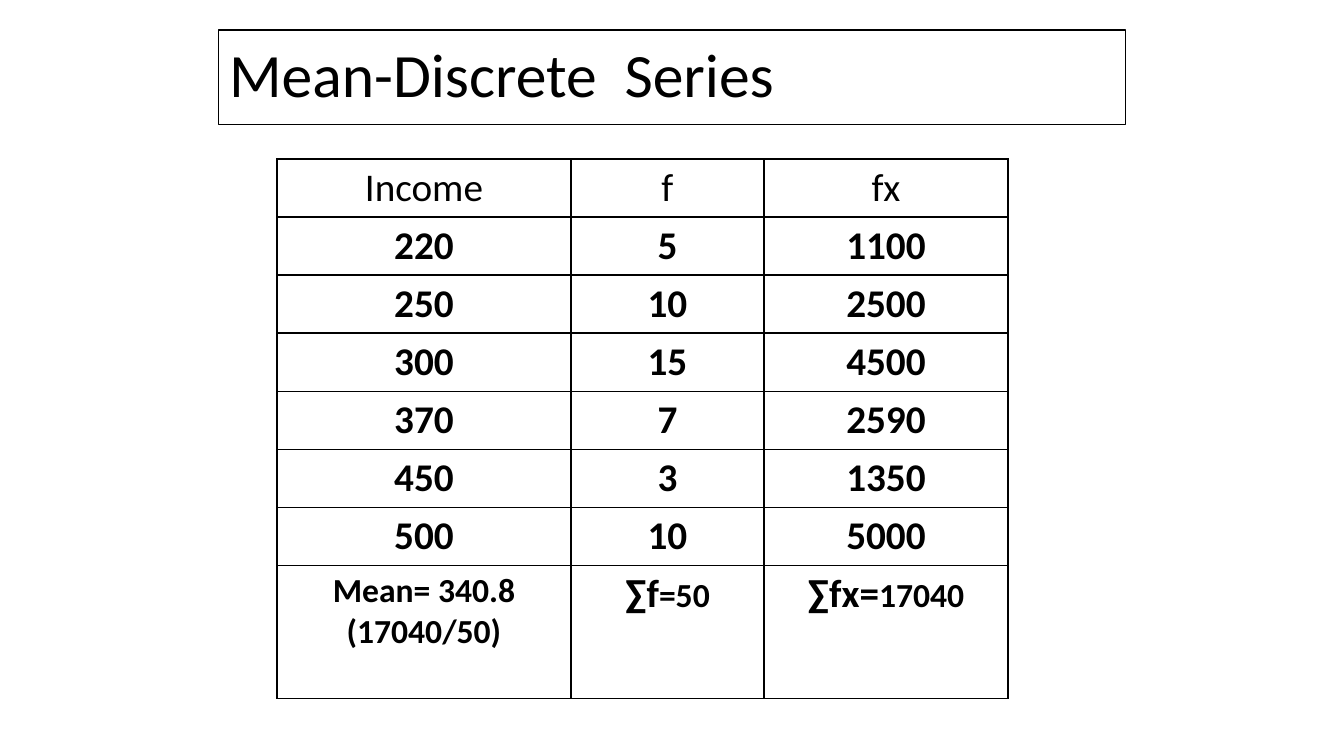
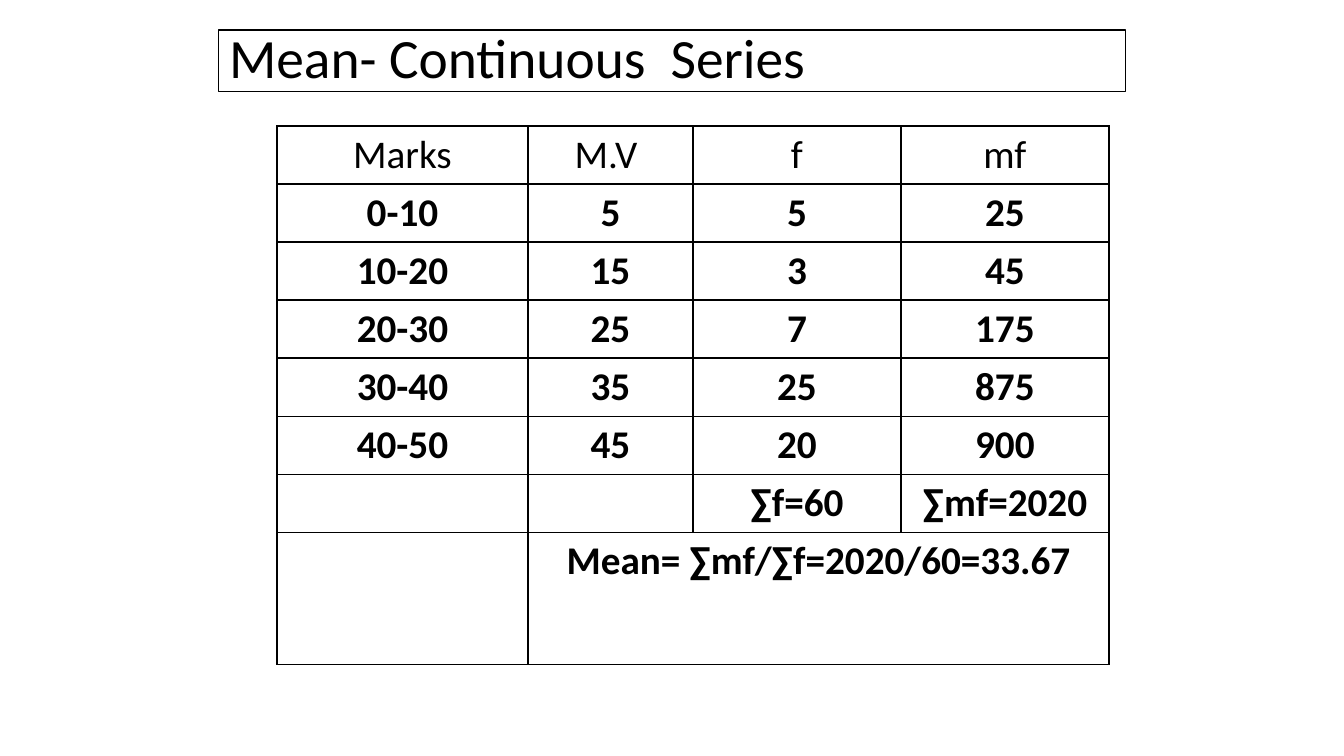
from lxml.etree import SubElement
from pptx import Presentation
from pptx.dml.color import RGBColor
from pptx.enum.text import MSO_ANCHOR, MSO_AUTO_SIZE, PP_ALIGN
from pptx.oxml.ns import qn
from pptx.util import Pt

SLIDE_WIDTH, SLIDE_HEIGHT = 1344, 756
PX = 12192000 / SLIDE_WIDTH
FONT = "Calibri"
BLACK, WHITE = "000000", "FFFFFF"
TITLE_LEFT, TITLE_TOP, TITLE_WIDTH = 219, 30, 907
TABLE_LEFT, ROW_HEIGHT = 277, 58
CELL_SIZE, SMALL_SIZE = 28, 24

# A cell is a plain string, or a list of paragraphs made of (text, size) runs.
SLIDES = [
    {
        "title": "Mean-Discrete  Series",
        "title_size": 44,
        "title_height": 95,
        "table_top": 159,
        "columns": [294, 193, 244],
        "last_row": 133,
        "rows": [
            ["Income", " f ", "fx"],
            ["220", "5", "1100"],
            ["250", "10", "2500"],
            ["300", "15", "4500"],
            ["370", "7", "2590"],
            ["450", "3", "1350"],
            ["500", "10", "5000"],
            [
                [[("Mean= 340.8", SMALL_SIZE)], [("(17040/50)", SMALL_SIZE)]],
                [[("∑f", CELL_SIZE), ("=50", SMALL_SIZE)]],
                [[("∑fx=", CELL_SIZE), ("17040", SMALL_SIZE)]],
            ],
        ],
    },
    {
        "title": "Mean- Continuous  Series",
        "title_size": 39.6,
        "title_height": 62,
        "table_top": 126,
        "columns": [251, 165, 208, 208],
        "last_row": 132,
        "merge": ((7, 1), (7, 3)),
        "rows": [
            ["Marks", "M.V ", " f ", "mf"],
            ["0-10", "5", "5", "25"],
            ["10-20", "15", "3", "45"],
            ["20-30", "25", "7", "175"],
            ["30-40", "35", "25", "875"],
            ["40-50", "45", "20", "900"],
            ["", "", "∑f=60", "∑mf=2020"],
            ["", "Mean= ∑mf/∑f=2020/60=33.67", "", ""],
        ],
    },
]


def px(length):
    return round(length * PX)


def color(value):
    return RGBColor.from_string(value)


def add_span(para, text, size, bold=False):
    span = para.add_run()
    span.text = text
    span.font.name = FONT
    span.font.size = Pt(size)
    span.font.bold = bold
    span.font.color.rgb = color(BLACK)


def format_title(box, content):
    box.left, box.top = px(TITLE_LEFT), px(TITLE_TOP)
    box.width, box.height = px(TITLE_WIDTH), px(content["title_height"])
    box.line.color.rgb = color(BLACK)
    box.line.width = Pt(0.75)
    frame = box.text_frame
    frame.word_wrap = True
    frame.auto_size = MSO_AUTO_SIZE.NONE
    frame.vertical_anchor = MSO_ANCHOR.MIDDLE
    para = frame.paragraphs[0]
    para.alignment = PP_ALIGN.LEFT
    para.line_spacing = 0.9
    add_span(para, content["title"], content["title_size"])


def add_borders(cell):
    properties = cell._tc.get_or_add_tcPr()
    for side in ("a:lnL", "a:lnR", "a:lnT", "a:lnB"):
        line = SubElement(properties, qn(side), w=str(Pt(1)))
        fill = SubElement(line, qn("a:solidFill"))
        SubElement(fill, qn("a:srgbClr"), val=BLACK)


def fill_cell(cell, value, bold):
    add_borders(cell)
    cell.fill.solid()
    cell.fill.fore_color.rgb = color(WHITE)
    if not value:
        return
    paragraphs = [[(value, CELL_SIZE)]] if isinstance(value, str) else value
    frame = cell.text_frame
    for index, spans in enumerate(paragraphs):
        para = frame.add_paragraph() if index else frame.paragraphs[0]
        para.alignment = PP_ALIGN.CENTER
        for text, size in spans:
            add_span(para, text, size, bold)


def add_data_table(page, content):
    rows, widths = content["rows"], content["columns"]
    heights = [ROW_HEIGHT] * (len(rows) - 1) + [content["last_row"]]
    table = page.shapes.add_table(
        len(rows), len(widths), px(TABLE_LEFT), px(content["table_top"]),
        px(sum(widths)), px(sum(heights))).table
    table.first_row = table.horz_banding = False
    for column, width in zip(table.columns, widths):
        column.width = px(width)
    for row, height in zip(table.rows, heights):
        row.height = px(height)
    for row_index, values in enumerate(rows):
        for column_index, value in enumerate(values):
            fill_cell(table.cell(row_index, column_index), value, row_index > 0)
    if "merge" in content:
        first, last = content["merge"]
        table.cell(*first).merge(table.cell(*last))


def main():
    deck = Presentation()
    deck.slide_width, deck.slide_height = px(SLIDE_WIDTH), px(SLIDE_HEIGHT)
    title_only = deck.slide_layouts[5]
    for content in SLIDES:
        page = deck.slides.add_slide(title_only)
        format_title(page.shapes.title, content)
        add_data_table(page, content)
    deck.save("out.pptx")


if __name__ == "__main__":
    main()
